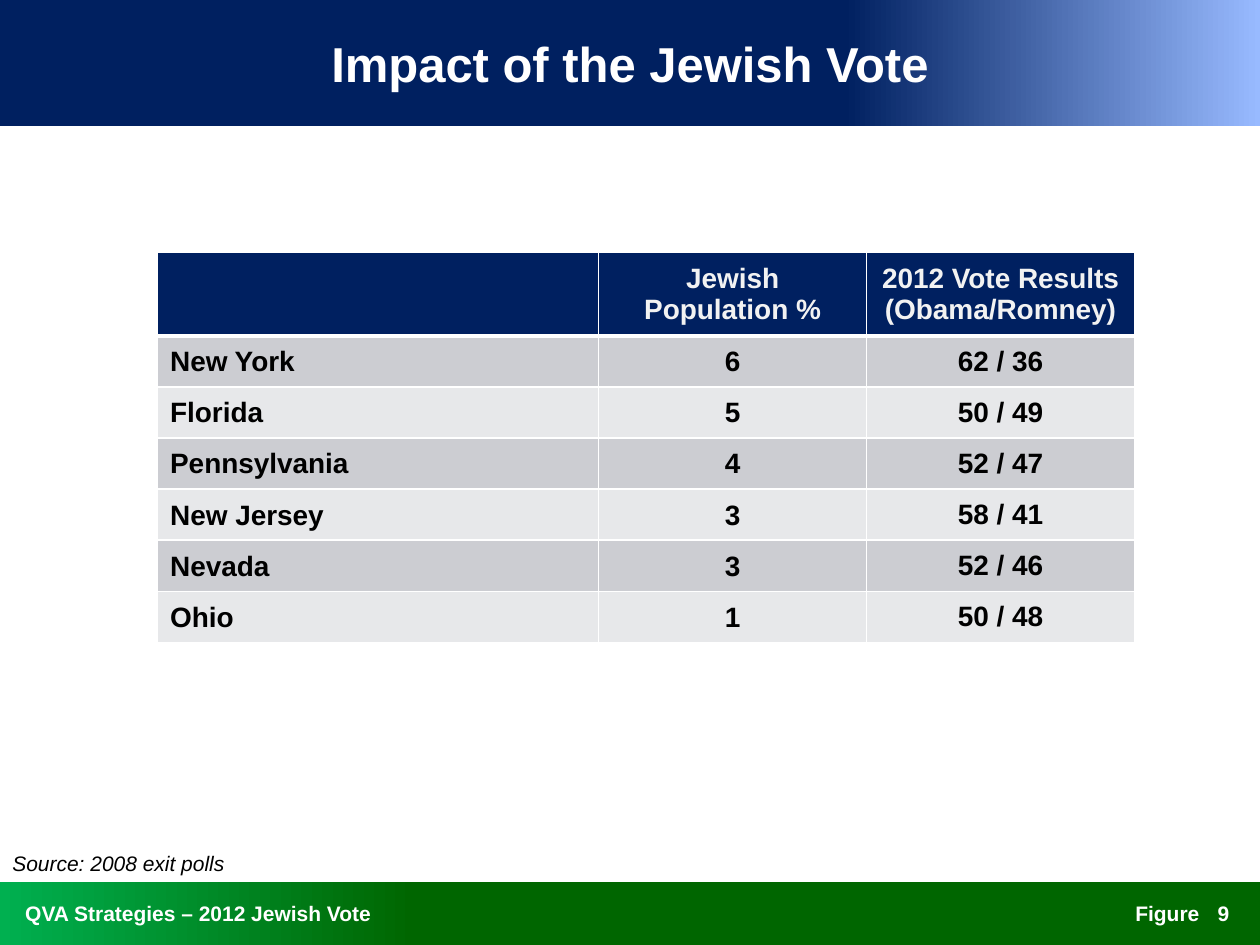
import pptx
import pptx.util
import pptx.dml.color
import pptx.enum.shapes
import pptx.enum.text
import pptx.oxml
import pptx.oxml.ns
from pptx.util import Cm

COLORS = {
    "navy": "002060",
    "sky": "98BAFF",
    "green": "006600",
    "mint": "00B050",
    "white": "FFFFFF",
    "black": "000000",
    "header_text": "F2F2F2",
    "dark_row": "CCCDD2",
    "light_row": "E7E8EA",
}
ALIGN = pptx.enum.text.PP_ALIGN
MIDDLE = pptx.enum.text.MSO_ANCHOR.MIDDLE
HEADER = ["", "Jewish Population %", "2012 Vote Results\n(Obama/Romney)"]
STATES = [
    ("New York", "6", "62 / 36"),
    ("Florida", "5", "50 / 49"),
    ("Pennsylvania", "4", "52 / 47"),
    ("New Jersey", "3", "58 / 41"),
    ("Nevada", "3", "52 / 46"),
    ("Ohio", "1", "50 / 48"),
]


def rgb(name):
    return pptx.dml.color.RGBColor.from_string(COLORS[name])


def style_text(frame, size, color, align, bold=True, italic=False):
    for para in frame.paragraphs:
        para.alignment = align
        font = para.font
        font.name = "Arial"
        font.size = pptx.util.Pt(size)
        font.bold = bold
        font.italic = italic
        font.color.rgb = rgb(color)


def add_band(page, top, height, start, end, angle):
    band = page.shapes.add_shape(
        pptx.enum.shapes.MSO_SHAPE.RECTANGLE, 0, Cm(top), Cm(25.4), Cm(height))
    band.shadow.inherit = False
    band.line.fill.background()
    band.fill.gradient()
    band.fill.gradient_angle = angle
    for stop, color, position in zip(band.fill.gradient_stops, (start, end), (0, 0.33)):
        stop.color.rgb = rgb(color)
        stop.position = position


def add_label(page, text, left, top, width, height, size=12, color="white",
              align=ALIGN.LEFT, margin=0.25, **emphasis):
    box = page.shapes.add_textbox(Cm(left), Cm(top), Cm(width), Cm(height))
    frame = box.text_frame
    frame.word_wrap = True
    frame.vertical_anchor = MIDDLE
    frame.margin_left = Cm(margin)
    frame.text = text
    style_text(frame, size, color, align, **emphasis)


def add_border(cell, side, width):
    properties = cell._tc.get_or_add_tcPr()
    properties.append(pptx.oxml.parse_xml(
        f'<a:ln{side} {pptx.oxml.ns.nsdecls("a")} w="{pptx.util.Pt(width)}">'
        f'<a:solidFill><a:srgbClr val="{COLORS["white"]}"/></a:solidFill>'
        f'</a:ln{side}>'))


def fill_cell(cell, text, row, column):
    for side in "LRTB":
        thick = (row, side) in ((0, "B"), (1, "T"))
        add_border(cell, side, 3 if thick else 1)
    cell.fill.solid()
    body_fill = "dark_row" if row % 2 else "light_row"
    cell.fill.fore_color.rgb = rgb(body_fill if row else "navy")
    cell.vertical_anchor = MIDDLE
    if column == 2:
        cell.margin_left = cell.margin_right = cell.margin_top = cell.margin_bottom = 0
    elif row:
        cell.margin_left = cell.margin_right = Cm(0.03 if column else 0.25)
        cell.margin_top = Cm(0.03)
        cell.margin_bottom = 0
    cell.text = text
    style_text(cell.text_frame, 16, "black" if row else "header_text",
               ALIGN.CENTER if column else ALIGN.LEFT)


def add_vote_table(page):
    rows = [HEADER, *STATES]
    table = page.shapes.add_table(
        len(rows), len(HEADER), Cm(3.18), Cm(5.08), Cm(19.69), Cm(7.87)).table
    for column, width in zip(table.columns, (8.89, 5.4, 5.4)):
        column.width = Cm(width)
    for index, texts in enumerate(rows):
        table.rows[index].height = Cm(1.03 if index else 1.69)
        for column, text in enumerate(texts):
            fill_cell(table.cell(index, column), text, index, column)


def main():
    deck = pptx.Presentation()
    deck.slide_width = Cm(25.4)
    deck.slide_height = Cm(19.05)
    page = deck.slides.add_slide(deck.slide_layouts[6])

    add_band(page, 17.78, 1.27, "mint", "green", 0)
    add_band(page, 0, 2.54, "sky", "navy", 180)
    add_label(page, "Figure", 21.46, 17.78, 2.97, 1.27, align=ALIGN.RIGHT)
    add_label(page, "QVA Strategies – 2012 Jewish Vote", 0, 17.78, 17.58, 1.27, margin=0.51)
    add_label(page, "Impact of the Jewish Vote", 0, 0, 25.4, 2.54, size=28,
              align=ALIGN.CENTER)
    add_label(page, "9", 23.93, 17.78, 1.47, 1.27, align=ALIGN.CENTER)
    add_label(page, "Source: 2008 exit polls", 0, 17.02, 5.08, 0.76, color="black",
              bold=False, italic=True)
    add_vote_table(page)

    deck.save("out.pptx")


if __name__ == "__main__":
    main()
